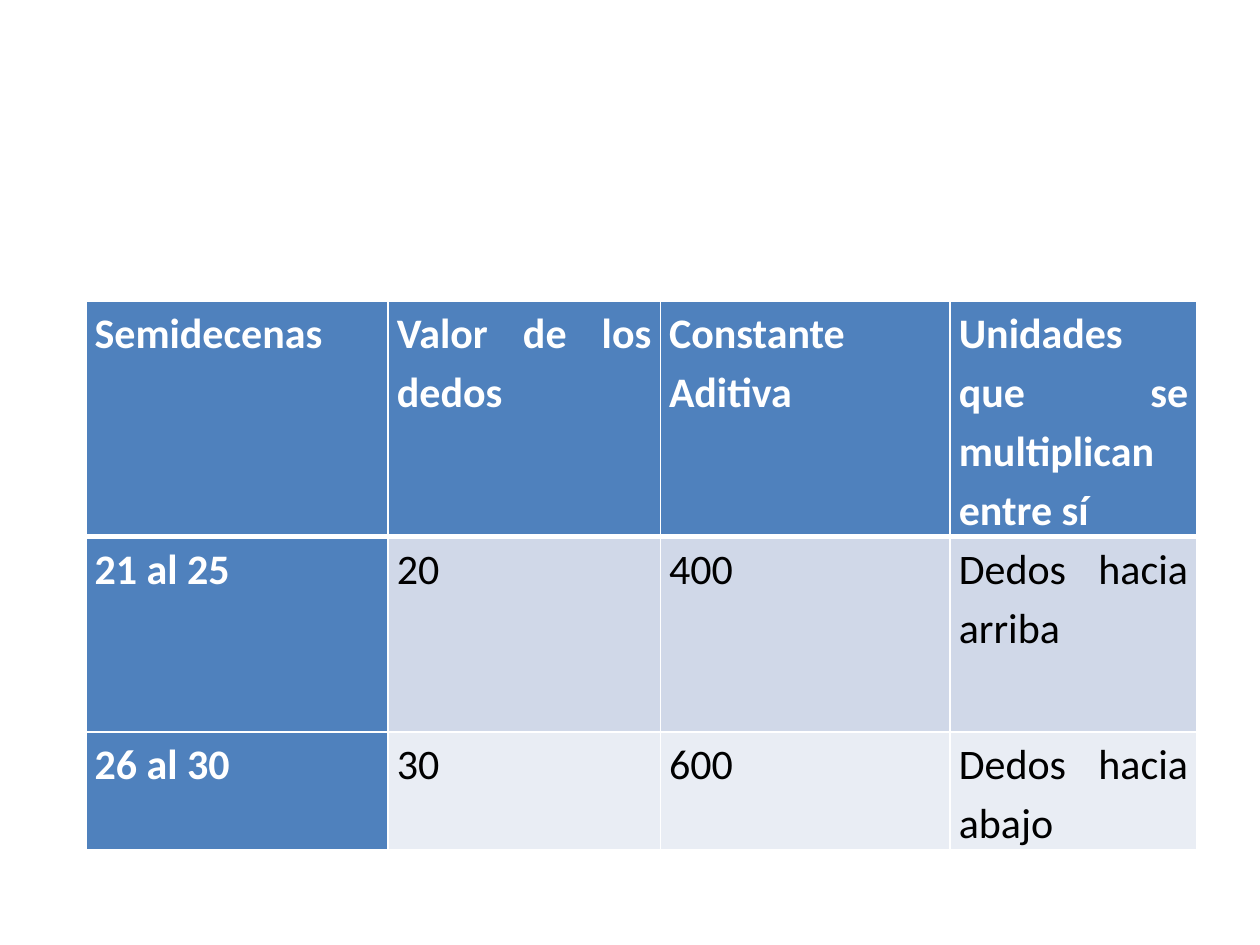
"""Build a slide with a table of finger-multiplication values by half-decade."""
from dataclasses import dataclass

from lxml import etree
from pptx import Presentation
from pptx.dml.color import RGBColor
from pptx.enum.text import PP_ALIGN
from pptx.oxml.ns import qn
from pptx.util import Pt

JUSTIFY = PP_ALIGN.JUSTIFY
BLANK_LAYOUT = 6
FONT = "Calibri"
COLORS = {
    "header": "4F81BD",
    "band_dark": "D0D8E8",
    "band_light": "E9EDF4",
    "white": "FFFFFF",
    "black": "000000",
}
COLUMN_WIDTHS = (172.8, 155.5, 165.6, 141.1)
TABLE_LEFT, TABLE_TOP = 49, 172.1
THIN, THICK = 1, 3


@dataclass
class TableRow:
    """One table row with its height in points and the fill of its values."""

    height: float
    fill: str
    texts: tuple[str, ...]


ROWS = (
    TableRow(113, "header", ("Semidecenas", "Valor de los dedos",
                             "Constante Aditiva",
                             "Unidades que se multiplican entre sí")),
    TableRow(111.6, "band_dark", ("21 al 25", "20", "400", "Dedos hacia arriba")),
    TableRow(54, "band_light", ("26 al 30", "30", "600", "Dedos hacia abajo")),
)


def add_borders(cell, widths: dict[str, float]) -> None:
    """Draw white borders of the given widths on the sides of a cell."""
    properties = cell._tc.get_or_add_tcPr()
    for side, width in widths.items():
        line = etree.SubElement(properties, qn(f"a:ln{side}"), w=str(Pt(width)))
        fill = etree.SubElement(line, qn("a:solidFill"))
        etree.SubElement(fill, qn("a:srgbClr"), val=COLORS["white"])


def format_cell(cell, text: str, fill: str, emphasis: bool) -> None:
    """Fill a cell and write its justified text."""
    cell.fill.solid()
    cell.fill.fore_color.rgb = RGBColor.from_string(COLORS[fill])
    cell.margin_left = cell.margin_right = Pt(5.04)
    cell.margin_top = cell.margin_bottom = Pt(0)
    para = cell.text_frame.paragraphs[0]
    para.alignment = JUSTIFY
    para.line_spacing = 1.15
    span = para.add_run()
    span.text = text
    span.font.name = FONT
    span.font.size = Pt(24)
    span.font.bold = emphasis
    color = COLORS["white" if emphasis else "black"]
    span.font.color.rgb = RGBColor.from_string(color)


def add_values_table(page, rows: tuple[TableRow, ...]) -> None:
    """Add the table with an emphasised first row and first column."""
    table = page.shapes.add_table(
        len(rows), len(COLUMN_WIDTHS), Pt(TABLE_LEFT), Pt(TABLE_TOP),
        Pt(sum(COLUMN_WIDTHS)), Pt(sum(row.height for row in rows))).table
    table.first_col = True
    for column, width in zip(table.columns, COLUMN_WIDTHS):
        column.width = Pt(width)
    for row_index, row in enumerate(rows):
        table.rows[row_index].height = Pt(row.height)
        borders = {"L": THIN, "R": THIN,
                   "T": THICK if row_index == 1 else THIN,
                   "B": THICK if row_index == 0 else THIN}
        for column_index, text in enumerate(row.texts):
            cell = table.cell(row_index, column_index)
            emphasis = row_index == 0 or column_index == 0
            add_borders(cell, borders)
            format_cell(cell, text, "header" if emphasis else row.fill, emphasis)


def main() -> None:
    """Create the deck and save it."""
    deck = Presentation()
    deck.slide_width, deck.slide_height = Pt(720), Pt(540)
    page = deck.slides.add_slide(deck.slide_layouts[BLANK_LAYOUT])
    add_values_table(page, ROWS)
    deck.save("out.pptx")


if __name__ == "__main__":
    main()
